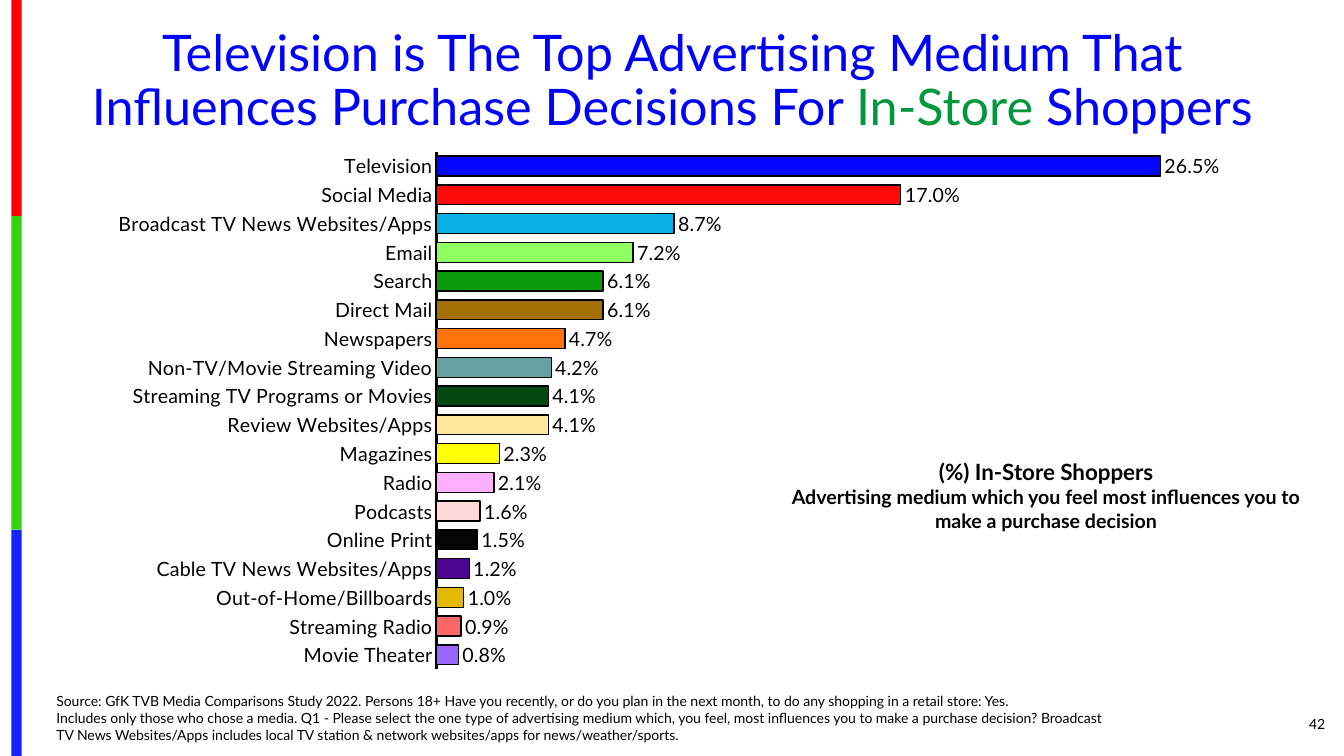
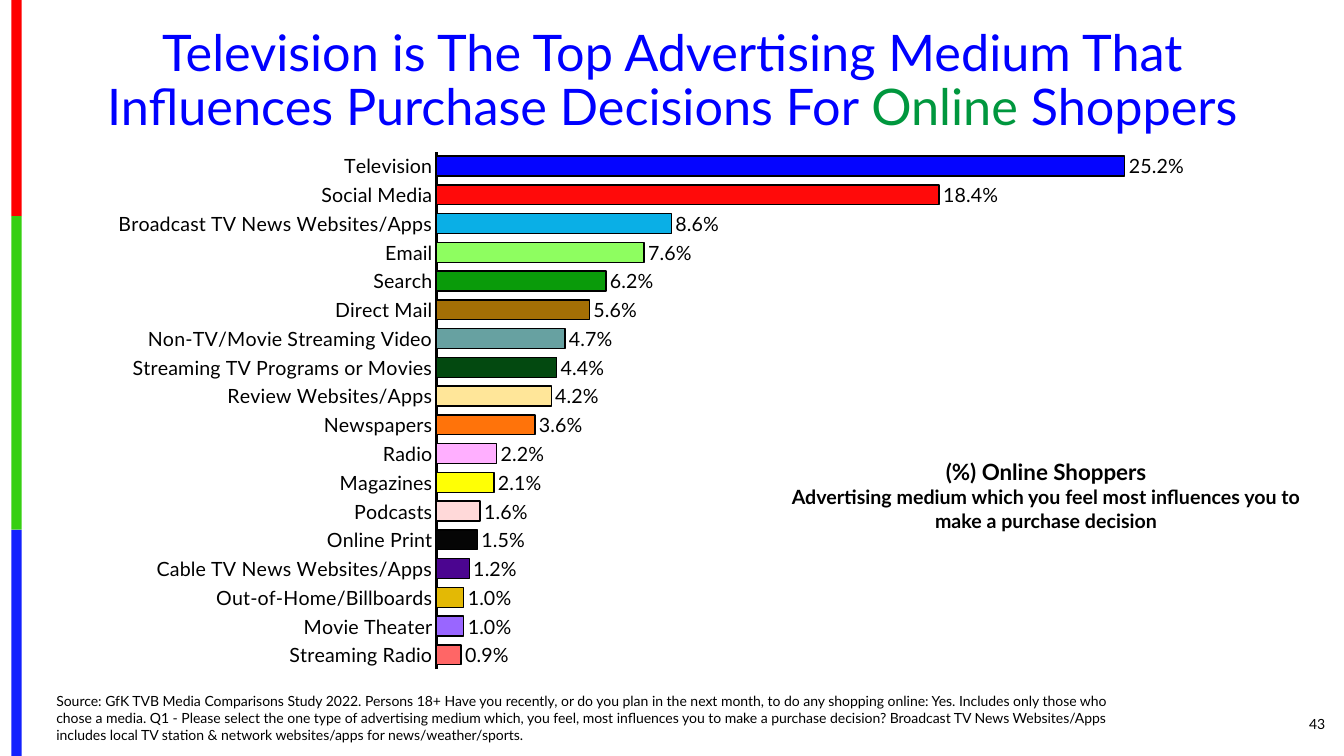
from dataclasses import dataclass
from typing import NamedTuple

from lxml import etree
from pptx import Presentation
from pptx import util as u
from pptx.chart import data as chart_data
from pptx.dml.color import RGBColor
from pptx.enum import chart as charts, shapes, text
from pptx.oxml import ns


class Box(NamedTuple):
    """Left, top, width and height in centimetres."""
    left: float
    top: float
    width: float
    height: float

    def lengths(self) -> list[u.Cm]:
        return [u.Cm(value) for value in self]


class Stripe(NamedTuple):
    top: float
    bottom: float
    color: str


@dataclass(frozen=True)
class Theme:
    font: str = "Lato"
    title: str = "0000FF"
    accent: str = "00973E"
    ink: str = "000000"
    bar: str = "CCCCCC"
    title_size: int = 36
    caption_size: int = 16
    label_size: int = 14
    note_size: int = 10


@dataclass(frozen=True)
class ShopperSlide:
    audience: str
    number: int
    shopping: str
    shares: dict[str, float]


THEME = Theme()
STRIPES = (
    Stripe(0, 5.45, "FE0000"),
    Stripe(5.45, 13.35, "36CF12"),
    Stripe(13.35, 19.05, "1322FE"),
)
STRIPE_LEFT, STRIPE_WIDTH = 0.29, 0.26

TITLE_BOX = Box(1.17, 0.56, 31.55, 3.02)
CHART_BOX = Box(1.17, 3.45, 31.01, 13.79)
CAPTION_BOX = Box(19.48, 11.43, 13.77, 2.13)
SOURCE_BOX = Box(1.17, 17.3, 27.2, 1.55)
NUMBER_BOX = Box(30.91, 17.73, 2.74, 1.02)
PLOT_AREA = {"x": 0.317, "y": 0.027, "w": 0.666, "h": 0.946}

MEDIUM_COLORS = {
    "Television": "0505FF",
    "Social Media": "FF0A0A",
    "Broadcast TV News Websites/Apps": "0AAFE6",
    "Email": "8EFE60",
    "Search": "0A9B0A",
    "Direct Mail": "A46F05",
    "Newspapers": "FF730A",
    "Non-TV/Movie Streaming Video": "67A1A1",
    "Streaming TV Programs or Movies": "034910",
    "Review Websites/Apps": "FFE699",
    "Magazines": "FFFF05",
    "Radio": "FFAFFF",
    "Podcasts": "FFD9D9",
    "Online Print": "050505",
    "Cable TV News Websites/Apps": "4B0590",
    "Out-of-Home/Billboards": "E3B905",
    "Streaming Radio": "FF6666",
    "Movie Theater": "9966FF",
}

SLIDES = (
    ShopperSlide("In-Store", 42, "to do any shopping in a retail store: Yes.\n", {
        "Television": 0.265,
        "Social Media": 0.17,
        "Broadcast TV News Websites/Apps": 0.087,
        "Email": 0.072,
        "Search": 0.061,
        "Direct Mail": 0.061,
        "Newspapers": 0.047,
        "Non-TV/Movie Streaming Video": 0.042,
        "Streaming TV Programs or Movies": 0.041,
        "Review Websites/Apps": 0.041,
        "Magazines": 0.023,
        "Radio": 0.021,
        "Podcasts": 0.016,
        "Online Print": 0.015,
        "Cable TV News Websites/Apps": 0.012,
        "Out-of-Home/Billboards": 0.01,
        "Streaming Radio": 0.009,
        "Movie Theater": 0.008,
    }),
    ShopperSlide("Online", 43, "to do any shopping online: Yes. ", {
        "Television": 0.252,
        "Social Media": 0.184,
        "Broadcast TV News Websites/Apps": 0.086,
        "Email": 0.076,
        "Search": 0.062,
        "Direct Mail": 0.056,
        "Non-TV/Movie Streaming Video": 0.047,
        "Streaming TV Programs or Movies": 0.044,
        "Review Websites/Apps": 0.042,
        "Newspapers": 0.036,
        "Radio": 0.022,
        "Magazines": 0.021,
        "Podcasts": 0.016,
        "Online Print": 0.015,
        "Cable TV News Websites/Apps": 0.012,
        "Out-of-Home/Billboards": 0.01,
        "Movie Theater": 0.01,
        "Streaming Radio": 0.009,
    }),
)


def rgb(color: str) -> RGBColor:
    return RGBColor.from_string(color)


def set_font(font, *, size: int, color: str = THEME.ink, bold: bool = False) -> None:
    font.name = THEME.font
    font.size = u.Pt(size)
    font.bold = bold
    font.color.rgb = rgb(color)


def write(paragraph, words: str, *, size: int, color: str = THEME.ink,
          bold: bool = False, align=None) -> None:
    """Append formatted words; each newline becomes a line break."""
    if align is not None:
        paragraph.alignment = align
    for index, line in enumerate(words.split("\n")):
        if index:
            paragraph.add_line_break()
        run = paragraph.add_run()
        run.text = line
        set_font(run.font, size=size, color=color, bold=bold)


def add_frame(slide, box: Box, anchor=text.MSO_ANCHOR.TOP):
    frame = slide.shapes.add_textbox(*box.lengths()).text_frame
    frame.word_wrap = True
    frame.vertical_anchor = anchor
    return frame


def add_stripes(slide) -> None:
    for stripe in STRIPES:
        box = Box(STRIPE_LEFT, stripe.top, STRIPE_WIDTH, stripe.bottom - stripe.top)
        band = slide.shapes.add_shape(shapes.MSO_SHAPE.RECTANGLE, *box.lengths())
        band.shadow.inherit = False
        band.fill.solid()
        band.fill.fore_color.rgb = rgb(stripe.color)
        band.line.fill.background()


def set_title(slide, audience: str) -> None:
    title = slide.shapes.title
    title.left, title.top, title.width, title.height = TITLE_BOX.lengths()
    frame = title.text_frame
    frame.auto_size = text.MSO_AUTO_SIZE.NONE
    frame.word_wrap = True
    frame.vertical_anchor = text.MSO_ANCHOR.MIDDLE
    heading = frame.paragraphs[0]
    heading.alignment = text.PP_ALIGN.CENTER
    heading.line_spacing = 0.9
    for words, color in (
        ("Television is The Top Advertising Medium That\n"
         "Influences Purchase Decisions For ", THEME.title),
        (audience, THEME.accent),
        (" Shoppers", THEME.title),
    ):
        write(heading, words, size=THEME.title_size, color=color)


def fix_plot_area(chart) -> None:
    """Place the inner plot area at fixed fractions of the chart."""
    plot_area = chart.plots[0]._element.getparent()
    for layout in plot_area.findall(ns.qn("c:layout")):
        plot_area.remove(layout)
    layout = etree.Element(ns.qn("c:layout"))
    manual = etree.SubElement(layout, ns.qn("c:manualLayout"))
    settings = {"layoutTarget": "inner", "xMode": "edge", "yMode": "edge", **PLOT_AREA}
    for tag, value in settings.items():
        etree.SubElement(manual, ns.qn(f"c:{tag}")).set("val", str(value))
    plot_area.insert(0, layout)


def add_share_chart(slide, shares: dict[str, float]) -> None:
    data = chart_data.CategoryChartData(number_format="0.0%")
    data.categories = list(shares)
    data.add_series("Series 1", list(shares.values()))
    chart = slide.shapes.add_chart(
        charts.XL_CHART_TYPE.BAR_CLUSTERED, *CHART_BOX.lengths(), data).chart
    chart.has_legend = False
    chart.has_title = False
    set_font(chart.font, size=THEME.note_size)

    media_axis = chart.category_axis
    media_axis.reverse_order = True
    media_axis.major_tick_mark = charts.XL_TICK_MARK.NONE
    media_axis.has_major_gridlines = False
    set_font(media_axis.tick_labels.font, size=THEME.label_size)
    media_axis.format.line.color.rgb = rgb(THEME.ink)
    media_axis.format.line.width = u.Pt(1.5)

    share_axis = chart.value_axis
    share_axis.minimum_scale, share_axis.maximum_scale = 0, 0.3
    share_axis.has_major_gridlines = False
    share_axis.visible = False

    plot = chart.plots[0]
    plot.gap_width = 45
    plot.vary_by_categories = False
    series = plot.series[0]
    series.invert_if_negative = False
    paint_bar(series, THEME.bar)
    for index, medium in enumerate(shares):
        paint_bar(series.points[index], MEDIUM_COLORS[medium])

    labels = series.data_labels
    labels.show_value = True
    labels.number_format = "0.0%"
    labels.number_format_is_linked = False
    labels.position = charts.XL_LABEL_POSITION.OUTSIDE_END
    set_font(labels.font, size=THEME.label_size)
    fix_plot_area(chart)


def paint_bar(bar, color: str) -> None:
    bar.format.fill.solid()
    bar.format.fill.fore_color.rgb = rgb(color)
    bar.format.line.color.rgb = rgb(THEME.ink)
    bar.format.line.width = u.Pt(1)


def add_caption(slide, audience: str) -> None:
    frame = add_frame(slide, CAPTION_BOX)
    center = text.PP_ALIGN.CENTER
    write(frame.paragraphs[0], f"(%) {audience} Shoppers",
          size=THEME.caption_size, bold=True, align=center)
    write(frame.add_paragraph(),
          "Advertising medium which you feel most influences you to make a purchase decision",
          size=THEME.label_size, bold=True, align=center)


def add_footer(slide, shopping: str, number: int) -> None:
    source = add_frame(slide, SOURCE_BOX, text.MSO_ANCHOR.BOTTOM)
    write(source.paragraphs[0],
          "Source: GfK TVB Media Comparisons Study 2022. Persons 18+ Have you recently, "
          f"or do you plan in the next month, {shopping}"
          "Includes only those who chose a media. Q1 - Please select the one type of "
          "advertising medium which, you feel, most influences you to make a purchase "
          "decision? Broadcast TV News Websites/Apps includes local TV station & network "
          "websites/apps for news/weather/sports.",
          size=THEME.note_size)
    page = add_frame(slide, NUMBER_BOX, text.MSO_ANCHOR.MIDDLE)
    write(page.paragraphs[0], str(number), size=THEME.note_size,
          align=text.PP_ALIGN.RIGHT)


def main() -> None:
    deck = Presentation()
    deck.slide_width, deck.slide_height = u.Cm(33.87), u.Cm(19.05)
    title_only = deck.slide_layouts.get_by_name("Title Only")
    for content in SLIDES:
        slide = deck.slides.add_slide(title_only)
        add_stripes(slide)
        set_title(slide, content.audience)
        add_footer(slide, content.shopping, content.number)
        add_caption(slide, content.audience)
        add_share_chart(slide, content.shares)
    deck.save("out.pptx")


if __name__ == "__main__":
    main()
